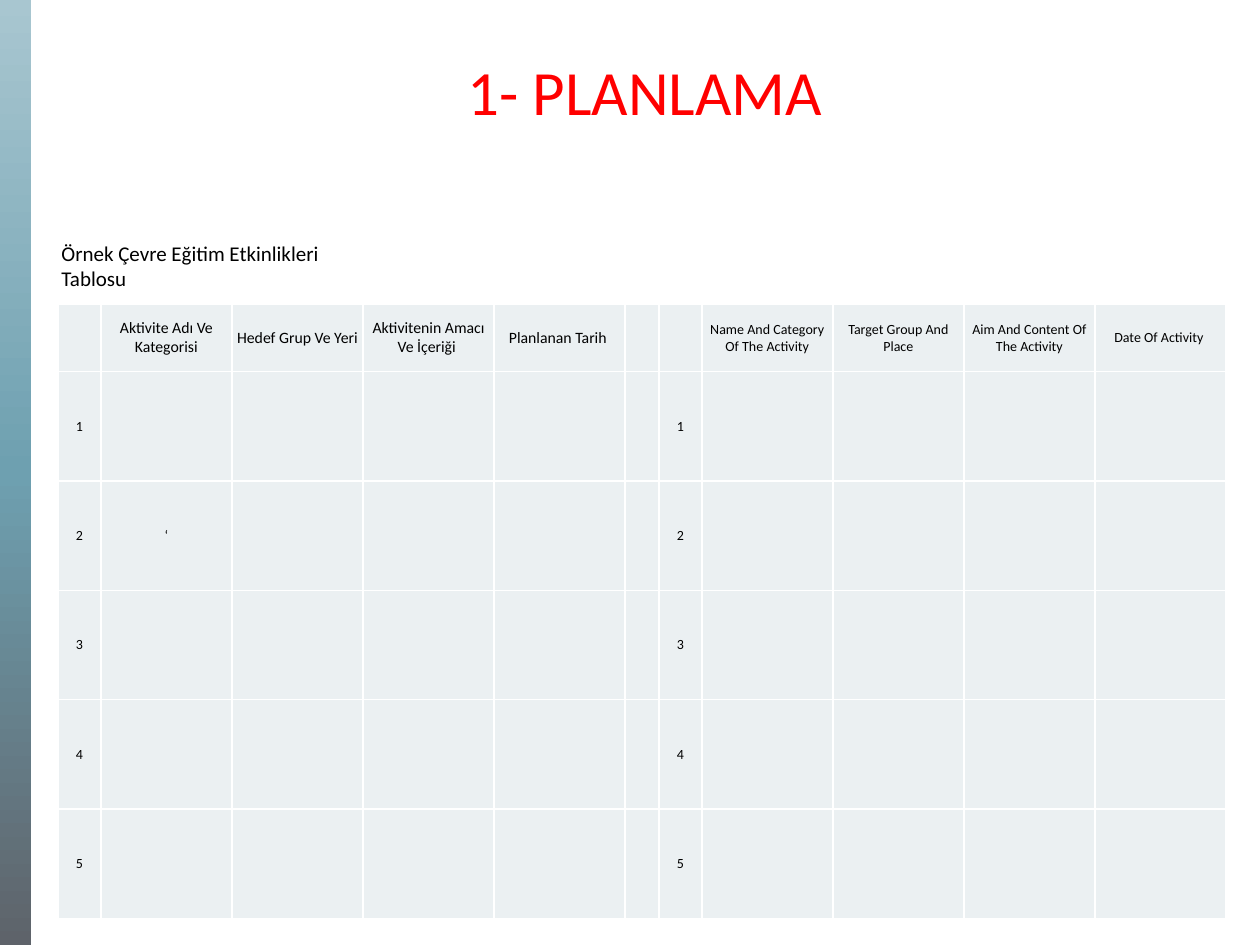
from copy import deepcopy

from pptx import Presentation
from pptx.dml.color import RGBColor
from pptx.enum.shapes import MSO_SHAPE
from pptx.enum.text import MSO_ANCHOR, PP_ALIGN
from pptx.util import Pt

TITLE = "1- PLANLAMA"
CAPTION = "Örnek Çevre Eğitim Etkinlikleri Tablosu"
TURKISH = ["Aktivite Adı Ve Kategorisi", "Hedef Grup Ve Yeri ",
           "Aktivitenin Amacı Ve İçeriği ", "Planlanan Tarih "]
ENGLISH = ["Name And Category Of The Activity", "Target Group And Place",
           "Aim And Content Of The Activity", "Date Of Activity "]
COUNT = 5
NOTES = {(2, 1): "‘"}

COLORS = {"title": "FF0000", "text": "000000", "cell": "EBF0F2"}
BAR = [(0, "A8C6D0"), (0.5, "6EA0B0"), (1, "5E636A")]
FONT = "Calibri"

NUM, WIDE, GAP = 24.5, 74.9, 19.4
COLS = [NUM] + [WIDE] * 4 + [GAP, NUM] + [WIDE] * 4
ROWS = [38.6] + [62.5] * COUNT
CELL = {"margin_left": Pt(3), "margin_right": Pt(3), "margin_top": 0,
        "margin_bottom": 0, "vertical_anchor": MSO_ANCHOR.MIDDLE}


def rgb(name):
    return RGBColor.from_string(COLORS[name])


def format_all(item, values):
    for key, value in values.items():
        setattr(item, key, value)


def write(frame, text, size, color="text", align=PP_ALIGN.LEFT):
    para = frame.paragraphs[0]
    para.alignment = align
    run = para.add_run()
    run.text = text
    format_all(run.font, {"name": FONT, "size": Pt(size)})
    run.font.color.rgb = rgb(color)


def add_bar(slide, height):
    bar = slide.shapes.add_shape(MSO_SHAPE.RECTANGLE, 0, 0, Pt(18), height)
    bar.shadow.inherit = False
    bar.line.fill.background()
    bar.fill.gradient()
    bar.fill.gradient_angle = 270
    first = bar.fill._fill._gradFill.gsLst[0]
    first.addnext(deepcopy(first))
    for stop, (place, color) in zip(bar.fill.gradient_stops, BAR):
        stop.position = place
        stop.color.rgb = RGBColor.from_string(color)


def add_title(slide):
    title = slide.shapes.title
    format_all(title, {"left": Pt(116), "top": Pt(26),
                       "width": Pt(505), "height": Pt(51)})
    format_all(title.text_frame, {"word_wrap": True,
                                  "vertical_anchor": MSO_ANCHOR.MIDDLE})
    write(title.text_frame, TITLE, 36, "title", PP_ALIGN.CENTER)


def add_caption(slide):
    box = slide.shapes.add_textbox(Pt(28), Pt(134), Pt(178.5), Pt(36))
    box.text_frame.word_wrap = True
    write(box.text_frame, CAPTION, 12)


def cell_texts():
    """Map (row, column) to its text and size."""
    texts = {place: (text, 8) for place, text in NOTES.items()}
    for start, heads, size in ((0, TURKISH, 9), (6, ENGLISH, 8)):
        for col, head in enumerate(heads, start + 1):
            texts[0, col] = head, size
        for row in range(1, COUNT + 1):
            texts[row, start] = str(row), 8
    return texts


def add_grid(slide):
    table = slide.shapes.add_table(len(ROWS), len(COLS), Pt(33.1), Pt(173.8),
                                   Pt(sum(COLS)), Pt(sum(ROWS))).table
    format_all(table, {"first_row": False, "horz_banding": False})
    for col, width in zip(table.columns, COLS):
        col.width = Pt(width)
    for row, height in zip(table.rows, ROWS):
        row.height = Pt(height)
    for cell in table.iter_cells():
        cell.fill.solid()
        cell.fill.fore_color.rgb = rgb("cell")
    for place, (text, size) in cell_texts().items():
        cell = table.cell(*place)
        format_all(cell, CELL)
        write(cell.text_frame, text, size, align=PP_ALIGN.CENTER)


def main():
    deck = Presentation()
    format_all(deck, {"slide_width": Pt(720), "slide_height": Pt(540)})
    slide = deck.slides.add_slide(deck.slide_layouts[5])
    add_bar(slide, deck.slide_height)
    add_title(slide)
    add_grid(slide)
    add_caption(slide)
    deck.save("out.pptx")


if __name__ == "__main__":
    main()
